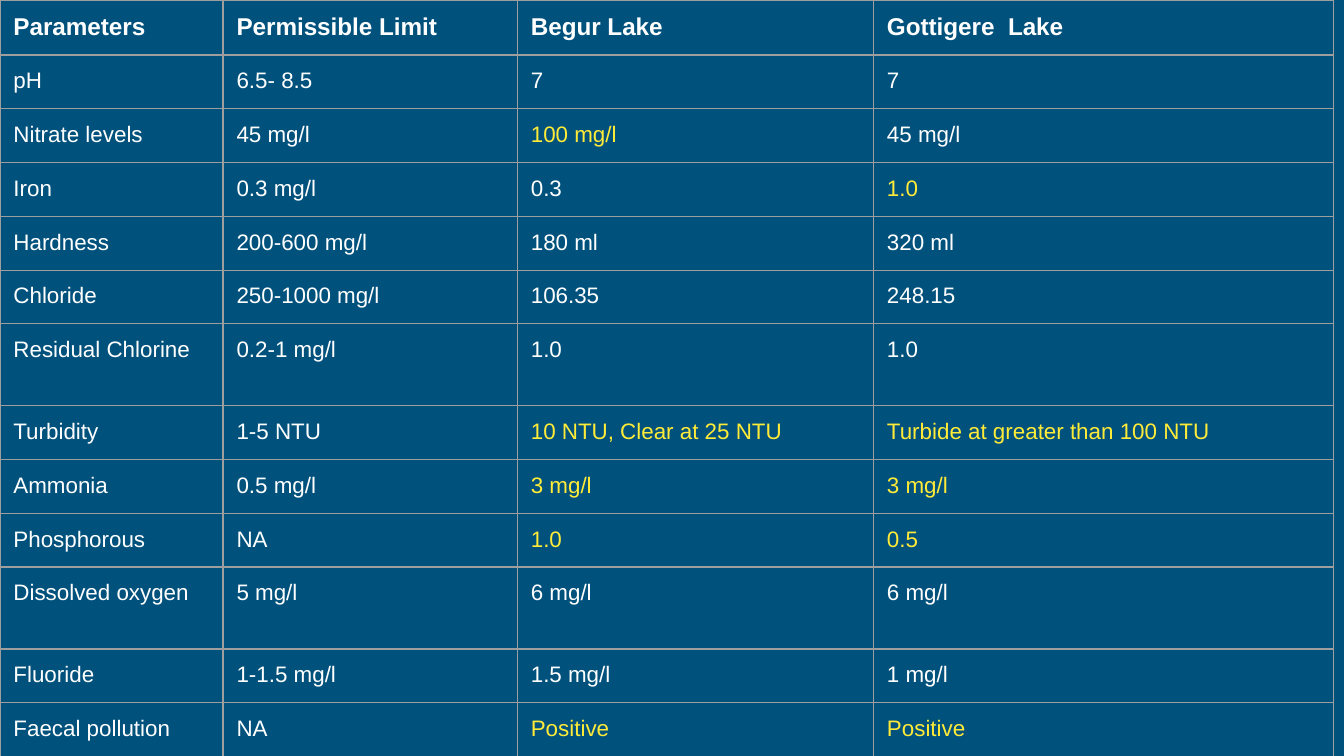
from lxml import etree
from pptx import Presentation
from pptx.dml.color import RGBColor
from pptx.oxml.ns import qn
from pptx.util import Inches, Pt

NAVY = RGBColor(0x00, 0x51, 0x7C)
WHITE = RGBColor(0xFF, 0xFF, 0xFF)
YELLOW = RGBColor(0xFF, 0xEB, 0x38)
GREY = RGBColor(0x9E, 0x9E, 0x9E)

HEADER = ("Parameters", "Permissible Limit", "Begur Lake", "Gottigere  Lake")
READINGS = [
    ("pH", "6.5- 8.5", "7", "7"),
    ("Nitrate levels", "45 mg/l", "100 mg/l", "45 mg/l"),
    ("Iron", "0.3 mg/l", "0.3", "1.0"),
    ("Hardness", "200-600 mg/l", "180 ml", "320 ml"),
    ("Chloride", "250-1000 mg/l", "106.35", "248.15"),
    ("Residual Chlorine", "0.2-1 mg/l", "1.0", "1.0"),
    ("Turbidity", "1-5 NTU", "10 NTU, Clear at 25 NTU",
     "Turbide at greater than 100 NTU"),
    ("Ammonia", "0.5 mg/l", "3 mg/l", "3 mg/l"),
    ("Phosphorous", "NA", "1.0", "0.5"),
    ("Dissolved oxygen", "5 mg/l", "6 mg/l", "6 mg/l"),
    ("Fluoride", "1-1.5 mg/l", "1.5 mg/l", "1 mg/l"),
    ("Faecal pollution", "NA", "Positive", "Positive"),
]
# Columns holding a highlighted reading, by parameter
HIGHLIGHTS = {
    "Nitrate levels": (2,),
    "Iron": (3,),
    "Turbidity": (2, 3),
    "Ammonia": (2, 3),
    "Phosphorous": (2, 3),
    "Faecal pollution": (2, 3),
}
COL_WIDTHS = (1.66, 2.19, 2.65, 3.42)
HEADER_HEIGHT, ROW_HEIGHT, TALL_HEIGHT = 0.41, 0.4, 0.61
TALL_ROWS = ("Residual Chlorine", "Dissolved oxygen")
MARGINS = ("margin_left", "margin_right", "margin_top", "margin_bottom")


def row_height(row):
    if row is HEADER:
        return HEADER_HEIGHT
    return TALL_HEIGHT if row[0] in TALL_ROWS else ROW_HEIGHT


def add_borders(cell):
    tc_pr = cell._tc.get_or_add_tcPr()
    for side in ("a:lnL", "a:lnR", "a:lnT", "a:lnB"):
        line = etree.SubElement(tc_pr, qn(side), w=str(Pt(0.75)))
        fill = etree.SubElement(line, qn("a:solidFill"))
        etree.SubElement(fill, qn("a:srgbClr"), val=str(GREY))


def fill_cell(cell, content, font_format, color):
    add_borders(cell)
    cell.fill.background()
    for margin in MARGINS:
        setattr(cell, margin, Inches(0.1))
    r = cell.text_frame.paragraphs[0].add_run()
    r.text = content
    for name, value in font_format.items():
        setattr(r.font, name, value)
    r.font.color.rgb = color


def main():
    prs = Presentation()
    prs.slide_width = Inches(10)
    prs.slide_height = prs.slide_width * 9 // 16
    s = prs.slides.add_slide(prs.slide_layouts[6])
    s.background.fill.solid()
    s.background.fill.fore_color.rgb = NAVY

    rows = [HEADER] + READINGS
    heights = [row_height(row) for row in rows]
    table = s.shapes.add_table(
        len(rows), len(COL_WIDTHS), 0, 0,
        Inches(sum(COL_WIDTHS)), Inches(sum(heights))).table
    table.horz_banding = False
    for column, width in zip(table.columns, COL_WIDTHS):
        column.width = Inches(width)

    for i, (row, height) in enumerate(zip(rows, heights)):
        table.rows[i].height = Inches(height)
        is_header = row is HEADER
        font_format = {"name": "Arial", "size": Pt(13 if is_header else 12),
                       "bold": is_header}
        for j, content in enumerate(row):
            highlighted = j in HIGHLIGHTS.get(row[0], ())
            fill_cell(table.cell(i, j), content, font_format,
                      YELLOW if highlighted else WHITE)

    prs.save("out.pptx")


if __name__ == "__main__":
    main()
